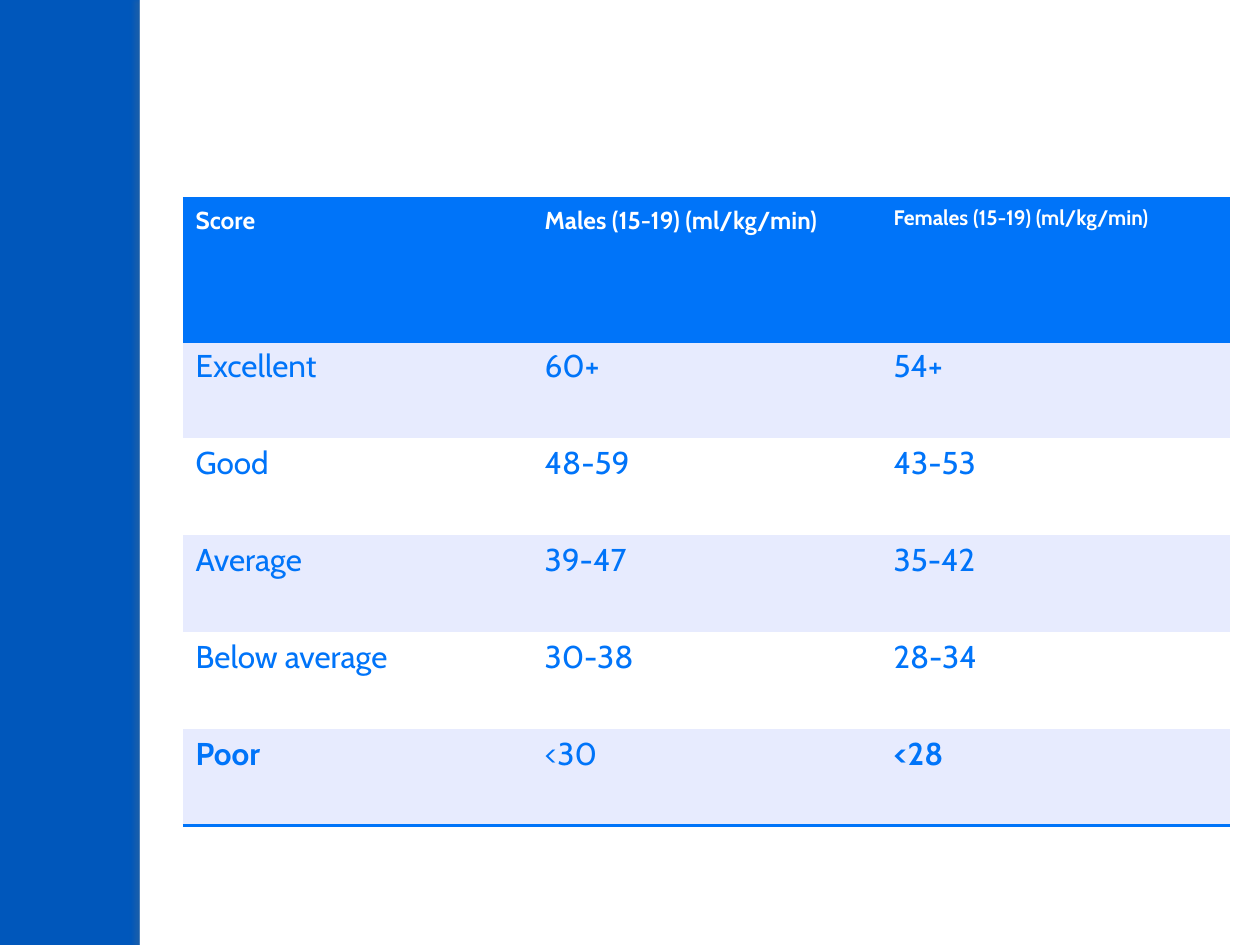
from dataclasses import dataclass

from lxml import etree
from pptx import Presentation
from pptx import util as u
from pptx.dml.color import RGBColor
from pptx.enum import shapes
from pptx.oxml import ns

SCALE = 914400 / 126  # EMU in one px
PLAIN = "{2D5ABB26-0587-4C30-8999-92F81FD0307C}"  # table style without lines


@dataclass(frozen=True)
class Theme:
    font: str = "Cabin"
    back: str = "0057BB"
    blue: str = "0074F9"
    band: str = "E7EBFE"
    white: str = "FFFFFF"
    shade: str = "61737F"
    head: int = 14
    small: int = 12
    body: int = 18
    line: int = 2


@dataclass(frozen=True)
class Box:
    x: int
    y: int
    w: int
    h: int


@dataclass(frozen=True)
class Row:
    cells: tuple[str, str, str]
    bold: tuple[int, ...] = ()


THEME = Theme()
PANEL = Box(140, 0, 1120, 945)
STRIP = Box(140, 0, 10, 945)
GRID = Box(183, 199, 1047, 627)
HEAD_H, ROW_H = 142, 97
ROWS = (
    Row(("Score", "Males (15-19) (ml/kg/min)", "Females (15-19) (ml/kg/min)"), (0, 1, 2)),
    Row(("Excellent", "60+", "54+")),
    Row(("Good", "48-59", "43-53")),
    Row(("Average", "39-47", "35-42")),
    Row(("Below average", "30-38", "28-34")),
    Row(("Poor", "<30", "<28"), (0, 2)),
)


def px(n: int) -> int:
    return round(n * SCALE)


def place(box: Box) -> tuple[int, ...]:
    return tuple(px(n) for n in (box.x, box.y, box.w, box.h))


def rgb(code: str) -> RGBColor:
    return RGBColor.from_string(code)


def sub(node, tag: str, **attrs: str):
    return etree.SubElement(node, ns.qn(tag), attrs)


def draw_rect(slide, box: Box):
    rect = slide.shapes.add_shape(shapes.MSO_SHAPE.RECTANGLE, *place(box))
    rect.fill.solid()
    rect.fill.fore_color.rgb = rgb(THEME.white)
    rect.line.fill.background()
    rect.shadow.inherit = False
    return rect


def cast_shade(rect) -> None:
    """Soft shadow falling to the left."""
    effects = rect._element.spPr.find(ns.qn("a:effectLst"))
    size = str(u.Pt(3))
    shadow = sub(effects, "a:outerShdw", blurRad=size, dist=size,
                 dir="10800000", algn="r", rotWithShape="0")
    color = sub(shadow, "a:srgbClr", val=THEME.shade)
    sub(color, "a:alpha", val="25000")


def add_edge(cell, side: str) -> None:
    props = cell._tc.get_or_add_tcPr()
    edge = etree.Element(ns.qn(f"a:{side}"), w=str(u.Pt(THEME.line)))
    fill = sub(edge, "a:solidFill")
    sub(fill, "a:srgbClr", val=THEME.blue)
    # Edges must come before the cell fill
    props.insert(len(props) - 1, edge)


def draw_cell(cell, words: str, fill: str, color: str, size: int, bold: bool) -> None:
    cell.fill.solid()
    cell.fill.fore_color.rgb = rgb(fill)
    cell.text = words
    font = cell.text_frame.paragraphs[0].font
    font.name, font.size, font.bold = THEME.font, u.Pt(size), bold
    font.color.rgb = rgb(color)


def draw_table(slide, rows: tuple[Row, ...], box: Box) -> None:
    count = len(rows[0].cells)
    table = slide.shapes.add_table(len(rows), count, *place(box)).table
    table._tbl.tblPr.find(ns.qn("a:tableStyleId")).text = PLAIN
    for col in table.columns:
        col.width = px(box.w // count)
    for r, row in enumerate(rows):
        head = r == 0
        table.rows[r].height = px(HEAD_H if head else ROW_H)
        fill = THEME.blue if head else THEME.band if r % 2 else THEME.white
        color = THEME.white if head else THEME.blue
        for c, words in enumerate(row.cells):
            size = THEME.body
            if head:
                size = THEME.small if c == count - 1 else THEME.head
            cell = table.cell(r, c)
            draw_cell(cell, words, fill, color, size, c in row.bold)
            if head:
                add_edge(cell, "lnT")
            if head or r == len(rows) - 1:
                add_edge(cell, "lnB")


def main() -> None:
    deck = Presentation()
    deck.slide_width, deck.slide_height = px(1260), px(945)
    slide = deck.slides.add_slide(deck.slide_layouts[6])

    # Blue side bar is the background left of the white panel
    slide.background.fill.solid()
    slide.background.fill.fore_color.rgb = rgb(THEME.back)
    draw_rect(slide, PANEL)
    cast_shade(draw_rect(slide, STRIP))

    # Fitness scores
    draw_table(slide, ROWS, GRID)
    deck.save("out.pptx")


if __name__ == "__main__":
    main()
